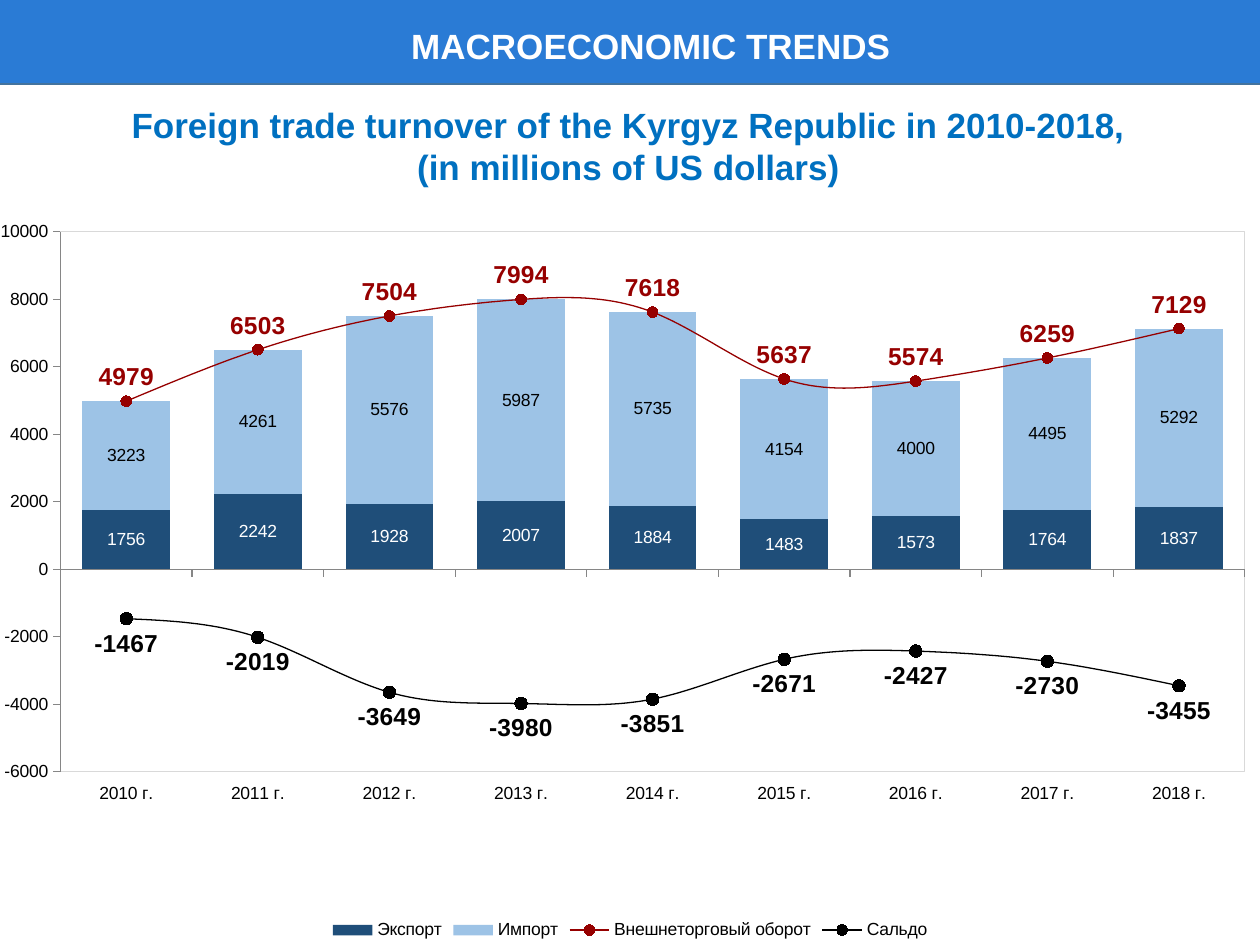
from lxml import etree
from pptx import Presentation
from pptx import util as u
from pptx.chart.data import CategoryChartData
from pptx.dml.color import RGBColor
from pptx.enum import chart as ch, shapes, text
from pptx.oxml import ns
from pptx.oxml.xmlchemy import OxmlElement

Cm = u.Cm
BLUE = RGBColor(0x2A, 0x7B, 0xD5)
EDGE = RGBColor(0x43, 0x73, 0x9E)
TITLE = RGBColor(0x00, 0x70, 0xC0)
NAVY = RGBColor(0x1F, 0x4E, 0x79)
SKY = RGBColor(0x9D, 0xC3, 0xE6)
RED = RGBColor(0x96, 0x00, 0x00)
BLACK = RGBColor(0, 0, 0)
WHITE = RGBColor(255, 255, 255)
GREY = RGBColor(0x86, 0x86, 0x86)
FRAME = "D9D9D9"

YEARS = [f"{year} г." for year in range(2010, 2019)]
TRADE = {
    "Экспорт": (1756, 2242, 1928, 2007, 1884, 1483, 1573, 1764, 1837),
    "Импорт": (3223, 4261, 5576, 5987, 5735, 4154, 4000, 4495, 5292),
    "Внешнеторговый оборот": (4979, 6503, 7504, 7994, 7618, 5637, 5574, 6259, 7129),
    "Сальдо": (-1467, -2019, -3649, -3980, -3851, -2671, -2427, -2730, -3455),
}


def add(parent, tag, **attrs):
    return etree.SubElement(parent, ns.qn(tag), attrs)


class Deck:
    font = "Arial"

    def __init__(self, slide):
        self.slide = slide

    def style(self, font, size, color, bold=False):
        font.name = self.font
        font.size = u.Pt(size)
        font.bold = bold
        font.color.rgb = color

    def bar(self, x, y, w, h, fill, edge):
        shape = self.slide.shapes.add_shape(
            shapes.MSO_SHAPE.RECTANGLE, Cm(x), Cm(y), Cm(w), Cm(h))
        shape.shadow.inherit = False
        shape.fill.solid()
        shape.fill.fore_color.rgb = fill
        shape.line.color.rgb = edge
        shape.line.width = u.Pt(1)

    def label(self, x, y, w, h, lines, color):
        frame = self.slide.shapes.add_textbox(Cm(x), Cm(y), Cm(w), Cm(h)).text_frame
        frame.word_wrap = True
        frame.auto_size = text.MSO_AUTO_SIZE.SHAPE_TO_FIT_TEXT
        frame.text = "\n".join(lines)
        for para in frame.paragraphs:
            para.alignment = text.PP_ALIGN.CENTER
            self.style(para.font, 20, color, True)

    def chart(self, x, y, w, h, years, trade):
        data = CategoryChartData(number_format="0")
        data.categories = years
        for name, values in trade.items():
            data.add_series(name, values)
        chart = self.slide.shapes.add_chart(
            ch.XL_CHART_TYPE.COLUMN_STACKED, Cm(x), Cm(y), Cm(w), Cm(h), data).chart
        self.style(chart.font, 10, BLACK)
        chart.has_title = False
        chart.has_legend = True
        chart.legend.position = ch.XL_LEGEND_POSITION.BOTTOM
        chart.legend.include_in_layout = False
        self.axes(chart)
        self.split(chart, 2)
        self.area(chart, x=0.048, y=0.024, w=0.94, h=0.739)
        return chart

    def axes(self, chart):
        value = chart.value_axis
        value.minimum_scale, value.maximum_scale = -6000, 10000
        value.major_unit = 2000
        value.has_major_gridlines = False
        value.tick_labels.number_format = "0"
        value.tick_labels.number_format_is_linked = False
        chart.category_axis.tick_label_position = ch.XL_TICK_LABEL_POSITION.LOW
        for axis in (value, chart.category_axis):
            axis.major_tick_mark = ch.XL_TICK_MARK.OUTSIDE
            axis.minor_tick_mark = ch.XL_TICK_MARK.NONE
            axis.format.line.color.rgb = GREY
            axis.format.line.width = u.Pt(0.75)

    def split(self, chart, first):
        plot = chart.plots[0]
        plot.gap_width, plot.overlap = 50, 100
        plot.vary_by_categories = False
        bars = chart._chartSpace.find(".//" + ns.qn("c:barChart"))
        lines = OxmlElement("c:lineChart")
        bars.addnext(lines)
        add(lines, "c:grouping", val="standard")
        add(lines, "c:varyColors", val="0")
        for ser in bars.findall(ns.qn("c:ser"))[first:]:
            for flag in ser.findall(ns.qn("c:invertIfNegative")):
                ser.remove(flag)
            lines.append(ser)
        add(lines, "c:marker", val="1")
        for axis in bars.findall(ns.qn("c:axId")):
            add(lines, "c:axId", val=axis.get("val"))

    def area(self, chart, **box):
        area = chart._chartSpace.find(".//" + ns.qn("c:plotArea"))
        for old in area.findall(ns.qn("c:layout")):
            area.remove(old)
        layout = OxmlElement("c:layout")
        area.insert(0, layout)
        manual = add(layout, "c:manualLayout")
        add(manual, "c:layoutTarget", val="inner")
        for side in "xy":
            add(manual, f"c:{side}Mode", val="edge")
        for side, size in box.items():
            add(manual, f"c:{side}", val=str(size))
        line = add(add(area, "c:spPr"), "a:ln", w="9525")
        add(add(line, "a:solidFill"), "a:srgbClr", val=FRAME)

    def values(self, series, size, color, bold=False, place=None):
        labels = series.data_labels
        labels.show_value = True
        labels.number_format = "0"
        labels.number_format_is_linked = False
        self.style(labels.font, size, color, bold)
        if place is not None:
            labels.position = place

    def column(self, series, fill, ink):
        series.format.fill.solid()
        series.format.fill.fore_color.rgb = fill
        self.values(series, 10, ink)

    def curve(self, series, color, size, place):
        series.smooth = True
        series.format.line.color.rgb = color
        series.format.line.width = u.Pt(0.75)
        mark = series.marker
        mark.style, mark.size = ch.XL_MARKER_STYLE.CIRCLE, size
        mark.format.fill.solid()
        mark.format.fill.fore_color.rgb = color
        mark.format.line.color.rgb = color
        self.values(series, 14, color, True, place)


def main():
    prs = Presentation()
    prs.slide_width, prs.slide_height = Cm(25.4), Cm(19.05)
    deck = Deck(prs.slides.add_slide(prs.slide_layouts[6]))
    deck.bar(-0.02, -0.02, 25.43, 1.72, BLUE, EDGE)
    deck.label(2.41, 0.36, 21.42, 1.11, ["MACROECONOMIC TRENDS"], WHITE)
    deck.label(0.96, 1.96, 23.42, 1.96, [
        "Foreign trade turnover of the Kyrgyz Republic in 2010-2018,",
        "(in millions of US dollars)"], TITLE)
    chart = deck.chart(0, 4.32, 25.4, 14.73, YEARS, TRADE)
    exports, imports, total, net = [s for plot in chart.plots for s in plot.series]
    deck.column(exports, NAVY, WHITE)
    deck.column(imports, SKY, BLACK)
    deck.curve(total, RED, 6, ch.XL_LABEL_POSITION.ABOVE)
    deck.curve(net, BLACK, 7, ch.XL_LABEL_POSITION.BELOW)
    prs.save("out.pptx")


if __name__ == "__main__":
    main()
